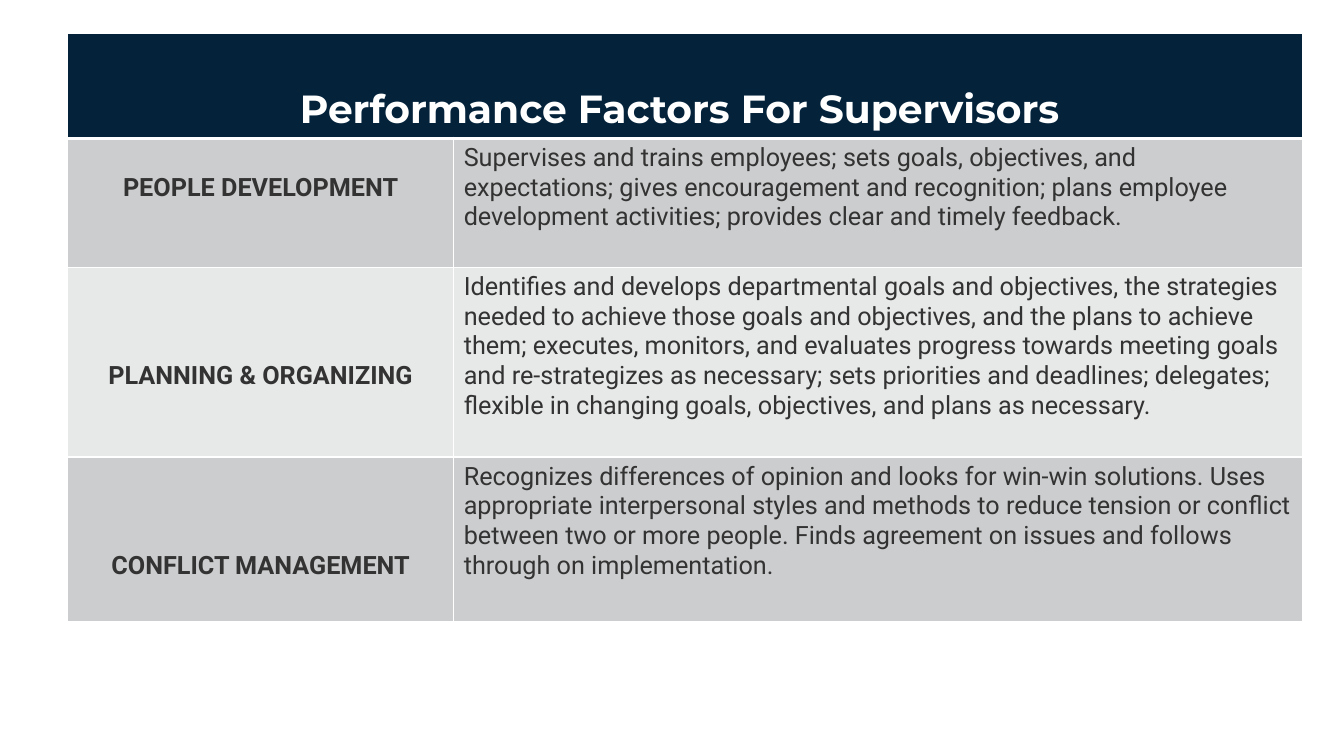
from lxml import etree
from pptx import Presentation
from pptx.dml.color import RGBColor
from pptx.enum import text
from pptx.oxml import ns
from pptx.util import Inches, Pt

NAVY = RGBColor(0x04, 0x23, 0x3B)
WHITE = RGBColor(0xFF, 0xFF, 0xFF)
INK = RGBColor(0x33, 0x33, 0x33)
GREY = RGBColor(0xCC, 0xCD, 0xCE)
PALE = RGBColor(0xE7, 0xE8, 0xE8)

COLUMN_WIDTHS = (3.83, 8.42)
ROW_HEIGHTS = (1.04, 1.28, 1.88, 1.63)
HEADING = "Performance Factors For Supervisors "
FACTORS = (
    ("PEOPLE DEVELOPMENT", 0.34, GREY,
     "Supervises and trains employees; sets goals, objectives, and expectations; "
     "gives encouragement and recognition; plans employee development activities; "
     "provides clear and timely feedback."),
    ("PLANNING & ORGANIZING", 0.93, PALE,
     "Identifies and develops departmental goals and objectives, the strategies needed "
     "to achieve those goals and objectives, and the plans to achieve them; executes, "
     "monitors, and evaluates progress towards meeting goals and re-strategizes as "
     "necessary; sets priorities and deadlines; delegates; flexible in changing goals, "
     "objectives, and plans as necessary."),
    ("CONFLICT MANAGEMENT", 0.93, GREY,
     "Recognizes differences of opinion and looks for win-win solutions. Uses appropriate "
     "interpersonal styles and methods to reduce tension or conflict between two or more "
     "people. Finds agreement on issues and follows through on implementation."),
)


def set_borders(cell, top=1, bottom=1):
    properties = cell._tc.get_or_add_tcPr()
    for side, weight in (("L", 1), ("R", 1), ("T", top), ("B", bottom)):
        border = etree.SubElement(properties, ns.qn(f"a:ln{side}"), w=str(Pt(weight)))
        solid = etree.SubElement(border, ns.qn("a:solidFill"))
        etree.SubElement(solid, ns.qn("a:srgbClr"), val=str(WHITE))


def paint(cell, color):
    cell.fill.solid()
    cell.fill.fore_color.rgb = color


def write(cell, wording, font_name, size, color, bold, align, top_margin=0.05):
    cell.margin_top = Inches(top_margin)
    paragraph = cell.text_frame.paragraphs[0]
    paragraph.alignment = align
    run = paragraph.add_run()
    run.text = wording
    run.font.name = font_name
    run.font.size = Pt(size)
    run.font.bold = bold
    run.font.color.rgb = color


def add_factor_table(slide):
    factors = slide.shapes.add_table(
        len(ROW_HEIGHTS), len(COLUMN_WIDTHS), Inches(0.67), Inches(0.33),
        Inches(sum(COLUMN_WIDTHS)), Inches(sum(ROW_HEIGHTS))).table
    for column, width in zip(factors.columns, COLUMN_WIDTHS):
        column.width = Inches(width)
    for row, height in zip(factors.rows, ROW_HEIGHTS):
        row.height = Inches(height)
    return factors


def fill_heading(factors):
    heading = factors.cell(0, 0)
    for cell in factors.rows[0].cells:
        set_borders(cell, bottom=3)
        paint(cell, NAVY)
    heading.merge(factors.cell(0, 1))
    write(heading, HEADING, "Montserrat", 28, WHITE, True, text.PP_ALIGN.CENTER, 0.52)


def fill_factor(factors, row, name, name_top, color, description):
    for cell in factors.rows[row].cells:
        set_borders(cell, top=3 if row == 1 else 1)
        paint(cell, color)
    write(factors.cell(row, 0), name, "Roboto", 18, INK, True,
          text.PP_ALIGN.CENTER, name_top)
    write(factors.cell(row, 1), description, "Roboto", 18, INK, False,
          text.PP_ALIGN.LEFT)


def main():
    deck = Presentation()
    deck.slide_width, deck.slide_height = Inches(13.33), Inches(7.5)
    slide = deck.slides.add_slide(deck.slide_layouts[6])
    factors = add_factor_table(slide)
    fill_heading(factors)
    for row, factor in enumerate(FACTORS, start=1):
        fill_factor(factors, row, *factor)
    deck.save("out.pptx")


if __name__ == "__main__":
    main()
